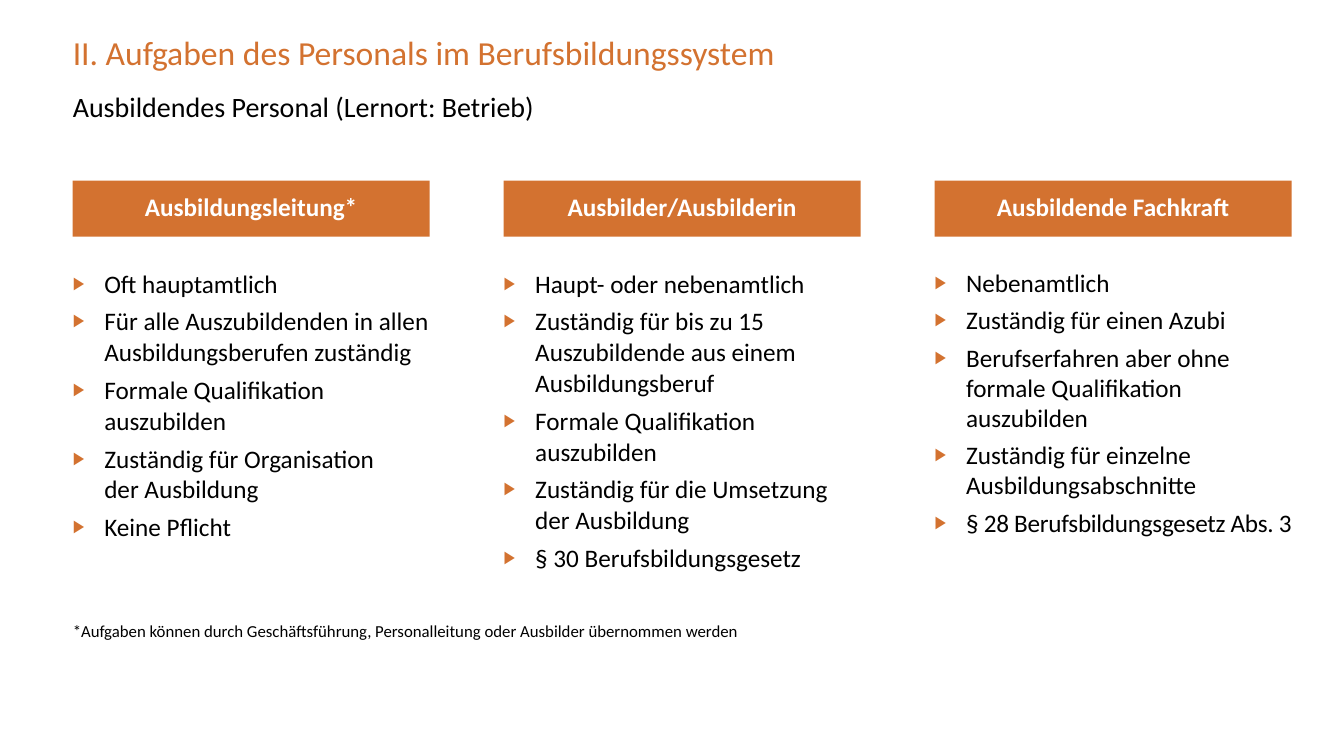
import lxml.etree
import pptx
import pptx.dml.color
import pptx.enum.shapes
import pptx.enum.text
import pptx.oxml.ns
import pptx.util

Pt = pptx.util.Pt
ALIGN = pptx.enum.text.PP_ALIGN
ANCHOR = pptx.enum.text.MSO_ANCHOR

ORANGE = pptx.dml.color.RGBColor(0xD3, 0x72, 0x30)
BLACK = pptx.dml.color.RGBColor(0, 0, 0)
WHITE = pptx.dml.color.RGBColor(0xFF, 0xFF, 0xFF)

LEFT = 52
COLUMN_PITCH = 307.8
COLUMN_TOP = 129
HEADING_WIDTH, HEADING_HEIGHT = 255, 40
LIST_OFFSET = 62
LIST_WIDTH, LIST_HEIGHT = 260, 230
INDENT = 22.5

# Heading, line spacing and list items of each column
COLUMNS = [
    ("Ausbildungsleitung*", Pt(22), [
        "Oft hauptamtlich",
        "Für alle Auszubildenden in allen Ausbildungsberufen zuständig",
        "Formale Qualifikation auszubilden",
        "Zuständig für Organisation\vder Ausbildung",
        "Keine Pflicht",
    ]),
    ("Ausbilder/Ausbilderin", Pt(22), [
        "Haupt- oder nebenamtlich",
        "Zuständig für bis zu 15 Auszubildende aus einem Ausbildungsberuf",
        "Formale Qualifikation auszubilden",
        "Zuständig für die Umsetzung\vder Ausbildung",
        "§ 30 Berufsbildungsgesetz",
    ]),
    ("Ausbildende Fachkraft", 1.0, [
        "Nebenamtlich",
        "Zuständig für einen Azubi",
        "Berufserfahren aber ohne formale Qualifikation auszubilden",
        "Zuständig für einzelne Ausbildungsabschnitte",
        "§ 28 Berufsbildungsgesetz Abs. 3",
    ]),
]


def place(shape, left, top, width, height):
    shape.left, shape.top = Pt(left), Pt(top)
    shape.width, shape.height = Pt(width), Pt(height)


def write(shape, text, size, color, bold=False, align=ALIGN.LEFT, anchor=ANCHOR.TOP):
    """Fill a shape with text, one paragraph a line, without insets."""
    frame = shape.text_frame
    frame.text = text
    frame.word_wrap = True
    frame.auto_size = pptx.enum.text.MSO_AUTO_SIZE.NONE
    frame.vertical_anchor = anchor
    frame.margin_left = frame.margin_right = frame.margin_top = frame.margin_bottom = 0
    for para in frame.paragraphs:
        para.alignment = align
        para.space_before = Pt(0)
        for span in para.runs:
            span.font.name = "Calibri"
            span.font.size = Pt(size)
            span.font.bold = bold
            span.font.color.rgb = color


def set_bullet(para, indent):
    """Give a paragraph an orange triangle and a hanging indent in points."""
    properties = para._p.get_or_add_pPr()
    properties.set("marL", str(Pt(indent)))
    properties.set("indent", str(-Pt(indent)))
    qn = pptx.oxml.ns.qn
    bullet_color = lxml.etree.SubElement(properties, qn("a:buClr"))
    lxml.etree.SubElement(bullet_color, qn("a:srgbClr"), val=str(ORANGE))
    lxml.etree.SubElement(properties, qn("a:buSzPct"), val="70000")
    lxml.etree.SubElement(properties, qn("a:buFont"), typeface="Arial")
    lxml.etree.SubElement(properties, qn("a:buChar"), char="▶")


def remove_bullet(para):
    properties = para._p.get_or_add_pPr()
    properties.set("marL", "0")
    properties.set("indent", "0")
    lxml.etree.SubElement(properties, pptx.oxml.ns.qn("a:buNone"))


def add_header(page, left, top):
    title, subtitle = page.shapes.title, page.placeholders[1]
    place(title, left, top, 708, 35)
    write(title, "II. Aufgaben des Personals im Berufsbildungssystem", 24, ORANGE)
    place(subtitle, left, top + 41, 870, 24)
    write(subtitle, "Ausbildendes Personal (Lernort: Betrieb)", 20, BLACK)
    remove_bullet(subtitle.text_frame.paragraphs[0])


def add_column(page, list_box, left, top, heading, line_spacing, items):
    bar = page.shapes.add_shape(pptx.enum.shapes.MSO_SHAPE.RECTANGLE, 0, 0, 0, 0)
    place(bar, left, top, HEADING_WIDTH, HEADING_HEIGHT)
    bar.shadow.inherit = False
    bar.fill.solid()
    bar.fill.fore_color.rgb = ORANGE
    bar.line.fill.background()
    write(bar, heading, 18, WHITE, True, ALIGN.CENTER, ANCHOR.MIDDLE)
    bar.text_frame.paragraphs[0].line_spacing = 0.9

    place(list_box, left, top + LIST_OFFSET, LIST_WIDTH, LIST_HEIGHT)
    write(list_box, "\n".join(items), 18, BLACK)
    for number, para in enumerate(list_box.text_frame.paragraphs):
        set_bullet(para, INDENT)
        para.line_spacing = line_spacing
        para.space_before = Pt(5 if number else 0)


def add_footnote(page, left, top):
    note = page.shapes.add_textbox(0, 0, 0, 0)
    place(note, left, top, 677, 15)
    write(note, "*Aufgaben können durch Geschäftsführung, Personalleitung "
                "oder Ausbilder übernommen werden", 12, BLACK)


def main():
    deck = pptx.Presentation()
    deck.slide_width, deck.slide_height = Pt(960), Pt(540)
    comparison_layout = deck.slide_layouts[4]
    page = deck.slides.add_slide(comparison_layout)

    add_header(page, LEFT, 23)
    for number, column in enumerate(COLUMNS):
        list_box = page.placeholders[number + 2]
        add_column(page, list_box, LEFT + number * COLUMN_PITCH, COLUMN_TOP, *column)
    # The last item of the last column is set slightly tighter to stay on one line
    tight_span = list_box.text_frame.paragraphs[-1].runs[0]
    tight_span._r.get_or_add_rPr().set("spc", "-20")
    add_footnote(page, LEFT, 443.5)

    deck.save("out.pptx")


if __name__ == "__main__":
    main()
